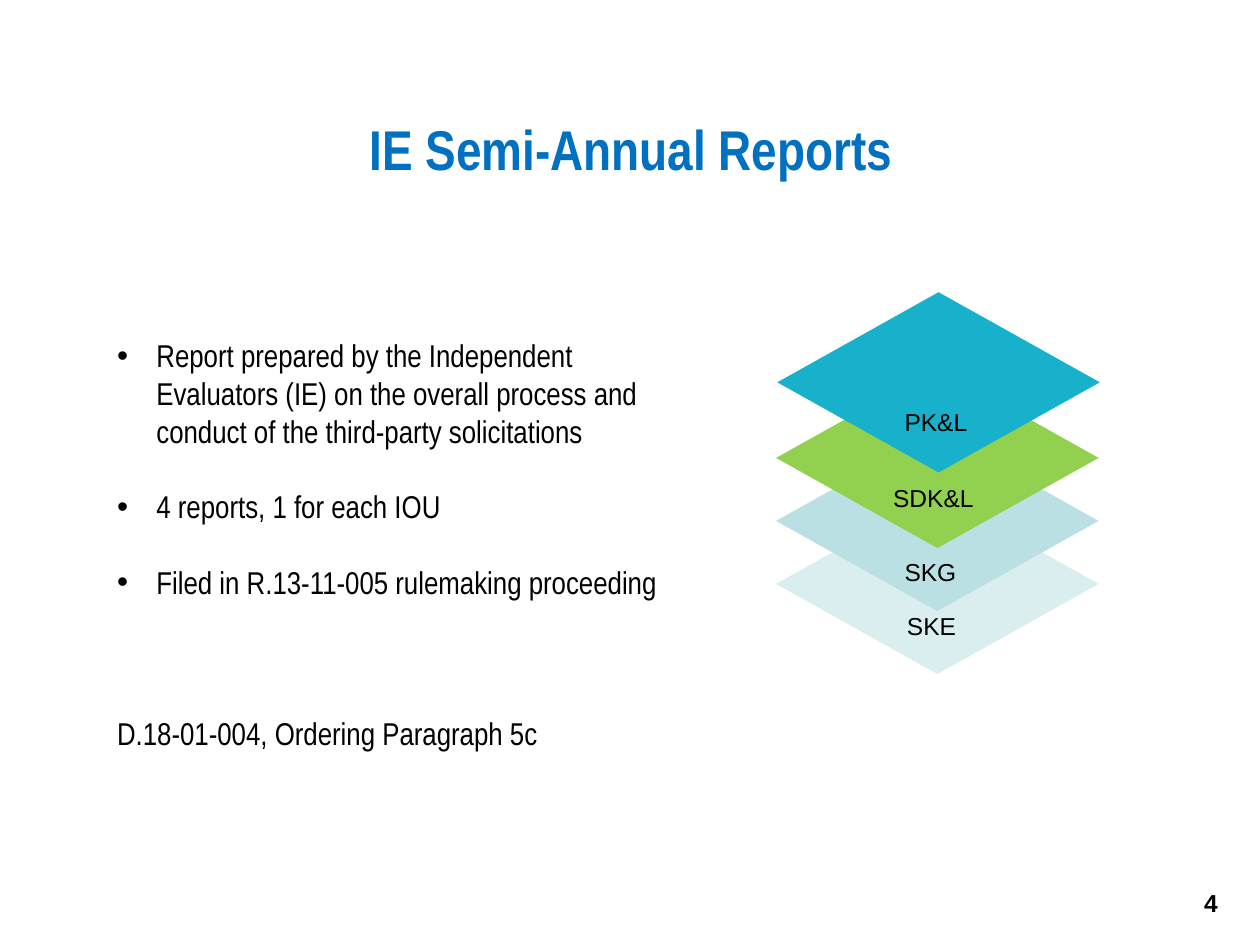
import pptx
import pptx.dml.color
import pptx.enum.shapes
import pptx.enum.text
import pptx.util
from lxml import etree

Pt = pptx.util.Pt
ALIGN = pptx.enum.text.PP_ALIGN
ANCHOR = pptx.enum.text.MSO_ANCHOR
LINE = 21.6  # height of one body line


def color(value):
    return pptx.dml.color.RGBColor.from_string(value)


def add_text(text, left, top, width, height, size=14, font="Arial", fill="000000",
             bold=False, align=ALIGN.LEFT, anchor=ANCHOR.TOP, bullets=(), gaps=()):
    """Add a text box; bullets holds bulleted line numbers, gaps the space before each line."""
    box = page.shapes.add_textbox(Pt(left), Pt(top), Pt(width), Pt(height))
    frame = box.text_frame
    frame.word_wrap = True
    frame.vertical_anchor = anchor
    frame.text = text
    for number, para in enumerate(frame.paragraphs):
        para.alignment = align
        if number in bullets:
            properties = para._p.get_or_add_pPr()
            properties.set("marL", str(Pt(22.5)))
            properties.set("indent", str(Pt(-22.5)))
            namespace = properties.nsmap["a"]
            etree.SubElement(properties, f"{{{namespace}}}buFont", typeface="Arial")
            etree.SubElement(properties, f"{{{namespace}}}buChar", char="•")
        if number > 0 and gaps:
            para.space_before = Pt(gaps[number])
        for span in para.runs:
            span.font.name = font
            span.font.size = Pt(size)
            span.font.bold = bold
            span.font.color.rgb = color(fill)


deck = pptx.Presentation()
deck.slide_width, deck.slide_height = Pt(720), Pt(540)
page = deck.slides.add_slide(deck.slide_layouts[6])

# Page number and title
add_text("4", 662, 504, 60, 36, bold=True, align=ALIGN.CENTER)
add_text("IE Semi-Annual Reports", 0.7, 59.8, 720, 49.7, size=32, font="Arial Narrow",
         fill="0070C0", bold=True, align=ALIGN.CENTER, anchor=ANCHOR.MIDDLE)

# Stack of diamonds, bottom layer first
layers = [
    (443.5, 282.2, "DAEDEF"),
    (443.5, 246.2, "BBE0E3"),
    (443.5, 210.2, "92D050"),
    (444.2, 167, "17B1CB"),
]
for left, top, fill in layers:
    diamond = page.shapes.add_shape(pptx.enum.shapes.MSO_SHAPE.DIAMOND,
                                    Pt(left), Pt(top), Pt(184.3), Pt(103))
    diamond.shadow.inherit = False
    diamond.fill.solid()
    diamond.fill.fore_color.rgb = color(fill)
    diamond.line.fill.background()

# Body text
body = [
    "Report prepared by the Independent Evaluators (IE) on the overall process and "
    "conduct of the third-party solicitations",
    "4 reports, 1 for each IOU",
    "Filed in R.13-11-005 rulemaking proceeding",
    "D.18-01-004, Ordering Paragraph 5c",
]
add_text("\n".join(body), 59.8, 167 + LINE, 347.8, 248, size=18, font="Arial Narrow",
         bullets=(0, 1, 2), gaps=(0, LINE, LINE, 3 * LINE))

# Layer labels, top layer first
labels = [
    ("PK&L", 509.8, 229),
    ("SDK&L", 503.3, 272.2),
    ("SKG", 509.8, 314.6),
    ("SKE", 511.2, 345.6),
]
for name, left, top in labels:
    add_text(name, left, top, 80, 24.5)

deck.save("out.pptx")
